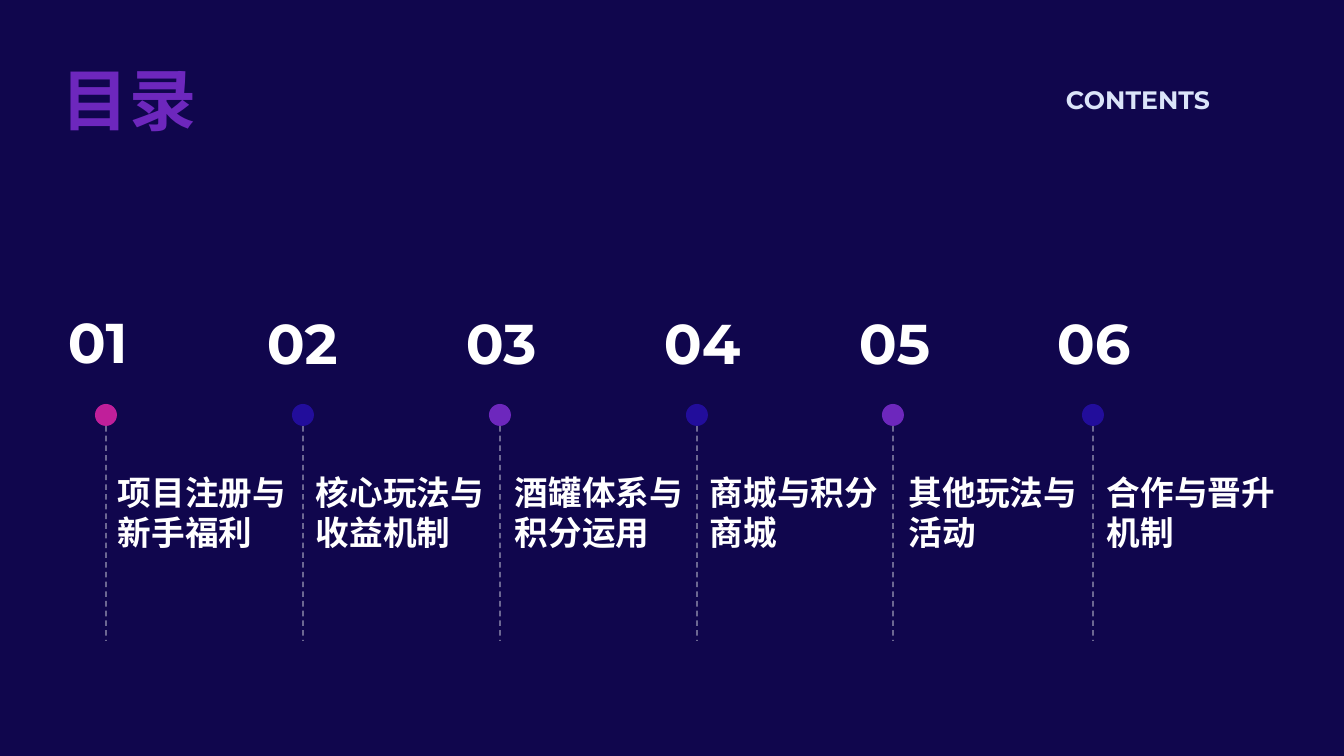
from lxml import etree
from pptx import Presentation
from pptx.dml.color import RGBColor
from pptx.enum.dml import MSO_LINE
from pptx.enum.shapes import MSO_CONNECTOR, MSO_SHAPE
from pptx.enum.text import MSO_ANCHOR, PP_ALIGN
from pptx.oxml.ns import qn
from pptx.util import Emu, Pt

NAVY = RGBColor(0x10, 0x06, 0x4D)
WHITE = RGBColor(0xFF, 0xFF, 0xFF)
PALE = RGBColor(0xDB, 0xE4, 0xF9)
PURPLE = RGBColor(0x6D, 0x27, 0xBD)
BLUE = RGBColor(0x22, 0x0D, 0x9B)
PINK = RGBColor(0xC0, 0x1F, 0x9A)


def px(n):
    return Emu(round(n * 12192000 / 1344))


def add_text(text, x, y, w, h, size, font, color, anchor=MSO_ANCHOR.TOP, align=PP_ALIGN.LEFT):
    tf = s.shapes.add_textbox(px(x), px(y), px(w), px(h)).text_frame
    tf.word_wrap = True
    tf.vertical_anchor = anchor
    p = tf.paragraphs[0]
    p.text = text
    p.alignment = align
    p.font.size = Pt(size)
    p.font.name = font
    p.font.bold = True
    p.font.color.rgb = color


prs = Presentation()
prs.slide_width, prs.slide_height = px(1344), px(756)
s = prs.slides.add_slide(prs.slide_layouts[6])
s.background.fill.solid()
s.background.fill.fore_color.rgb = NAVY

add_text("目录", 52, 52, 205, 92, 48, "Arial", PURPLE, MSO_ANCHOR.BOTTOM, PP_ALIGN.JUSTIFY)
add_text("CONTENTS", 1056, 79, 232, 40, 18, "Montserrat", PALE, align=PP_ALIGN.JUSTIFY)

chapters = [
    ("项目注册与新手福利", 106, 58, 108, 303, PINK),
    ("核心玩法与收益机制", 303, 257, 306, 304, BLUE),
    ("酒罐体系与积分运用", 500, 456, 505, 304, PURPLE),
    ("商城与积分商城", 697, 654, 700, 304, BLUE),
    ("其他玩法与活动", 893, 849, 899, 304, PURPLE),
    ("合作与晋升机制", 1093, 1047, 1097, 304, BLUE),
]
for i, (title, x, number_x, title_x, number_y, color) in enumerate(chapters, 1):
    line = s.shapes.add_connector(MSO_CONNECTOR.STRAIGHT, px(x), px(426), px(x), px(641))
    line.line.color.rgb = WHITE
    line.line.width = Pt(1)
    line.line.dash_style = MSO_LINE.DASH
    sp_pr = line._element.spPr
    etree.SubElement(sp_pr, qn("a:effectLst"))
    alpha = etree.SubElement(sp_pr.find(".//" + qn("a:srgbClr")), qn("a:alpha"))
    alpha.set("val", "60000")

    dot = s.shapes.add_shape(MSO_SHAPE.OVAL, px(x - 11), px(404), px(22), px(22))
    dot.shadow.inherit = False
    dot.fill.solid()
    dot.fill.fore_color.rgb = color
    dot.line.fill.background()

    add_text(title, title_x, 467, 191, 152, 24, "Arial", WHITE)
    add_text(f"{i:02}", number_x, number_y, 235, 77, 40, "Montserrat", WHITE, MSO_ANCHOR.BOTTOM)

prs.save("out.pptx")
